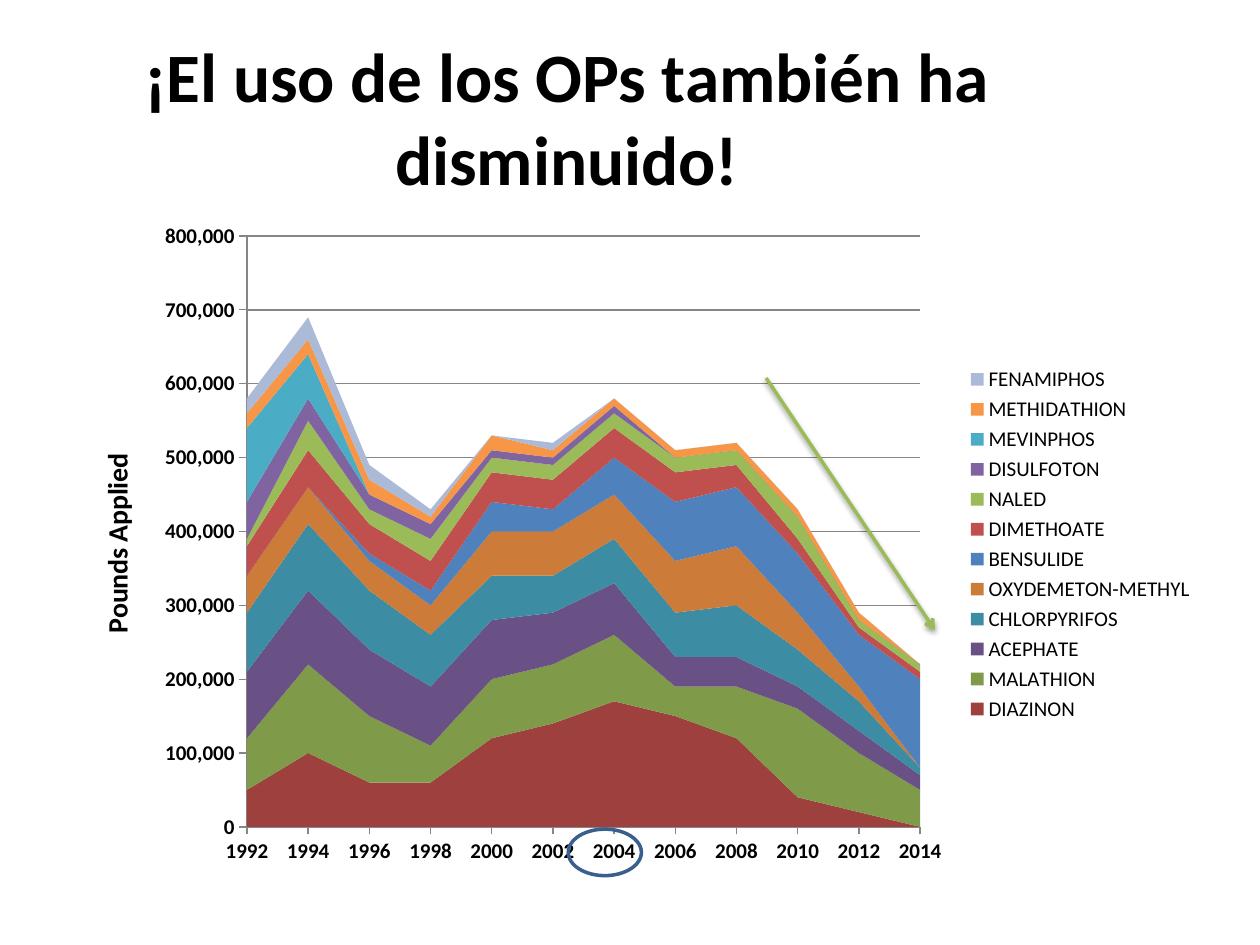
from dataclasses import dataclass

import lxml.etree
import pptx
import pptx.chart.data
import pptx.dml.color
import pptx.enum.chart
import pptx.enum.shapes
import pptx.enum.text
import pptx.oxml
import pptx.oxml.ns
import pptx.util

Pt = pptx.util.Pt
qn = pptx.oxml.ns.qn
A_NS = 'xmlns:a="http://schemas.openxmlformats.org/drawingml/2006/main"'
C_NS = 'xmlns:c="http://schemas.openxmlformats.org/drawingml/2006/chart"'


@dataclass(frozen=True)
class Theme:
    font: str = "Calibri"
    text: str = "000000"
    grid: str = "868686"
    arrow: str = "9BBB59"
    ring: str = "3A5F8C"
    title_size: float = 39.6
    axis_title_size: float = 16
    label_size: float = 12
    mark_width: float = 2


@dataclass(frozen=True)
class Box:
    left: float
    top: float
    width: float
    height: float

    def emu(self) -> tuple:
        return tuple(Pt(v) for v in (self.left, self.top, self.width, self.height))


@dataclass(frozen=True)
class Pesticide:
    name: str
    color: str
    ten_thousands: tuple


THEME = Theme()
CHART = Box(41.8, 120.2, 648, 381.6)
PLOT = Box(141.1, 134.9, 384.7, 337.7)
YEARS = range(1992, 2015, 2)
PESTICIDES = [
    Pesticide("DIAZINON", "9E413E", (5, 10, 6, 6, 12, 14, 17, 15, 12, 4, 2, 0)),
    Pesticide("MALATHION", "7F9A48", (7, 12, 9, 5, 8, 8, 9, 4, 7, 12, 8, 5)),
    Pesticide("ACEPHATE", "695185", (9, 10, 9, 8, 8, 7, 7, 4, 4, 3, 3, 2)),
    Pesticide("CHLORPYRIFOS", "3C8DA3", (8, 9, 8, 7, 6, 5, 6, 6, 7, 5, 4, 1)),
    Pesticide("OXYDEMETON-METHYL", "CC7B38", (5, 5, 4, 4, 6, 6, 6, 7, 8, 5, 2, 0)),
    Pesticide("BENSULIDE", "4F81BD", (0, 0, 1, 2, 4, 3, 5, 8, 8, 8, 7, 12)),
    Pesticide("DIMETHOATE", "C0504D", (4, 5, 4, 4, 4, 4, 4, 4, 3, 2, 1, 1)),
    Pesticide("NALED", "9BBB59", (1, 4, 2, 3, 2, 2, 2, 2, 2, 3, 1, 1)),
    Pesticide("DISULFOTON", "8064A2", (5, 3, 2, 2, 1, 1, 1, 0, 0, 0, 0, 0)),
    Pesticide("MEVINPHOS", "4BACC6", (10, 6, 0, 0, 0, 0, 0, 0, 0, 0, 0, 0)),
    Pesticide("METHIDATHION", "F79646", (2, 2, 2, 1, 2, 1, 1, 1, 1, 1, 1, 0)),
    Pesticide("FENAMIPHOS", "AABAD7", (2, 3, 2, 1, 0, 1, 0, 0, 0, 0, 0, 0)),
]


def rgb(color: str) -> pptx.dml.color.RGBColor:
    return pptx.dml.color.RGBColor.from_string(color)


def set_font(font, size: float, bold: bool) -> None:
    font.name = THEME.font
    font.size = Pt(size)
    font.bold = bold
    font.color.rgb = rgb(THEME.text)


def set_line(line, color: str, width: float) -> None:
    line.color.rgb = rgb(color)
    line.width = Pt(width)


def chart_layout(left: float, top: float, size: str = "", target: str = ""):
    """Manual layout: slide points turned into fractions of the chart."""
    x = (left - CHART.left) / CHART.width
    y = (top - CHART.top) / CHART.height
    return pptx.oxml.parse_xml(
        f'<c:layout {C_NS}><c:manualLayout>{target}'
        f'<c:xMode val="edge"/><c:yMode val="edge"/>'
        f'<c:x val="{x}"/><c:y val="{y}"/>{size}</c:manualLayout></c:layout>')


def replace_layout(parent, layout, index: int) -> None:
    for old in parent.findall(qn("c:layout")):
        parent.remove(old)
    parent.insert(index, layout)


def add_title(s, box: Box, text: str) -> None:
    tf = s.shapes.add_textbox(*box.emu()).text_frame
    tf.word_wrap = True
    tf.vertical_anchor = pptx.enum.text.MSO_ANCHOR.MIDDLE
    p = tf.paragraphs[0]
    p.alignment = pptx.enum.text.PP_ALIGN.CENTER
    r = p.add_run()
    r.text = text
    set_font(r.font, THEME.title_size, True)


def style_axes(chart) -> None:
    for axis in (chart.category_axis, chart.value_axis):
        set_font(axis.tick_labels.font, THEME.label_size, True)
        axis.major_tick_mark = pptx.enum.chart.XL_TICK_MARK.OUTSIDE
        axis.minor_tick_mark = pptx.enum.chart.XL_TICK_MARK.NONE
        set_line(axis.format.line, THEME.grid, 0.75)
    chart.category_axis.has_major_gridlines = False

    axis = chart.value_axis
    axis.minimum_scale, axis.maximum_scale, axis.major_unit = 0, 800000, 100000
    axis.tick_labels.number_format = "#,##0"
    axis.tick_labels.number_format_is_linked = False
    axis.has_major_gridlines = True
    set_line(axis.major_gridlines.format.line, THEME.grid, 0.75)
    # Areas start on the value axis itself
    axis._element.find(qn("c:crossBetween")).set("val", "midCat")

    # Rotated axis title
    title = axis.axis_title
    tf = title.text_frame
    r = tf.paragraphs[0].add_run()
    r.text = "Pounds Applied"
    set_font(r.font, THEME.axis_title_size, True)
    body = tf._txBody.find(qn("a:bodyPr"))
    body.set("rot", "-5400000")
    body.set("vert", "horz")
    replace_layout(title._element, chart_layout(53.2, 256.4), 1)


def add_area_chart(s) -> None:
    data = pptx.chart.data.CategoryChartData(number_format="#,##0")
    data.categories = [str(year) for year in YEARS]
    for item in PESTICIDES:
        data.add_series(item.name, [v * 10000 for v in item.ten_thousands])
    chart = s.shapes.add_chart(
        pptx.enum.chart.XL_CHART_TYPE.AREA_STACKED, *CHART.emu(), data).chart
    chart.has_title = False
    set_font(chart.font, 10, False)
    for series, item in zip(chart.plots[0].series, PESTICIDES):
        series.format.fill.solid()
        series.format.fill.fore_color.rgb = rgb(item.color)
    style_axes(chart)

    chart.has_legend = True
    chart.legend.position = pptx.enum.chart.XL_LEGEND_POSITION.RIGHT
    chart.legend.include_in_layout = False
    set_font(chart.legend.font, THEME.label_size, False)

    # Plot area inside the axes
    size = (f'<c:w val="{PLOT.width / CHART.width}"/>'
            f'<c:h val="{PLOT.height / CHART.height}"/>')
    replace_layout(
        chart._chartSpace.chart.plotArea,
        chart_layout(PLOT.left, PLOT.top, size, '<c:layoutTarget val="inner"/>'), 0)


def add_trend_arrow(s, start: tuple, end: tuple) -> None:
    arrow = s.shapes.add_connector(
        pptx.enum.shapes.MSO_CONNECTOR.STRAIGHT, *(Pt(v) for v in start + end))
    set_line(arrow.line, THEME.arrow, THEME.mark_width)
    lxml.etree.SubElement(arrow.line._get_or_add_ln(), qn("a:tailEnd"), type="arrow")
    arrow._element.spPr.append(pptx.oxml.parse_xml(
        f'<a:effectLst {A_NS}><a:outerShdw blurRad="{Pt(3.1)}" dist="{Pt(1.6)}" '
        f'dir="5400000" rotWithShape="0"><a:srgbClr val="000000">'
        f'<a:alpha val="38000"/></a:srgbClr></a:outerShdw></a:effectLst>'))


def add_year_ring(s, box: Box) -> None:
    sp = s.shapes.add_shape(pptx.enum.shapes.MSO_SHAPE.OVAL, *box.emu())
    sp.shadow.inherit = False
    sp.fill.background()
    set_line(sp.line, THEME.ring, THEME.mark_width)


def main() -> None:
    prs = pptx.Presentation()
    prs.slide_width, prs.slide_height = Pt(720), Pt(540)
    s = prs.slides.add_slide(prs.slide_layouts[6])

    # Heading and chart
    add_title(s, Box(0, 21.6, 648, 90), "¡El uso de los OPs también ha disminuido!")
    add_area_chart(s)

    # Marks over the chart
    add_trend_arrow(s, (437.8, 216), (534.2, 360))
    add_year_ring(s, Box(324.7, 473.8, 41.8, 26.6))

    prs.save("out.pptx")


if __name__ == "__main__":
    main()
